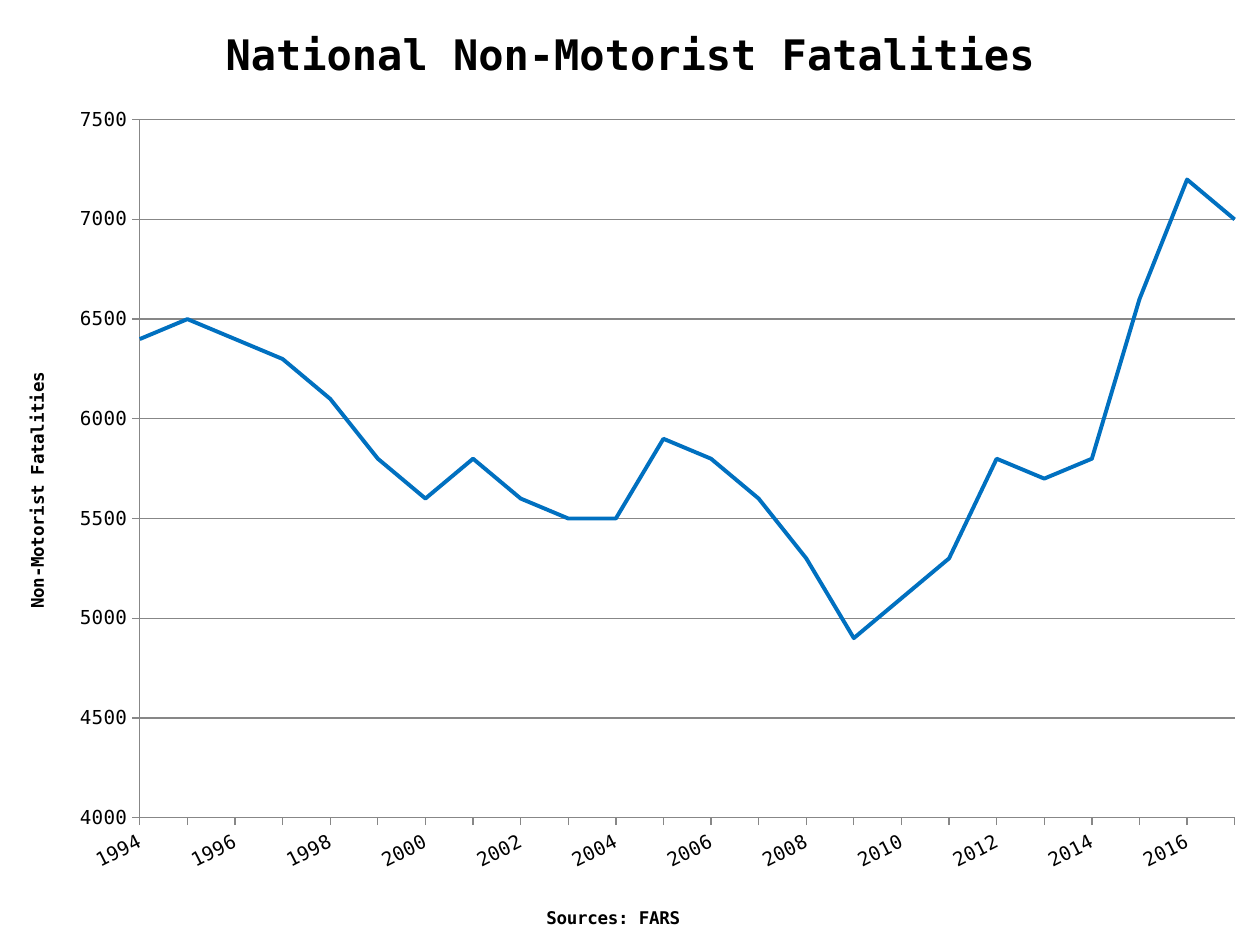
import dataclasses

import lxml.etree
import pptx
import pptx.chart.data
import pptx.dml.color
import pptx.enum.chart
import pptx.oxml.ns
import pptx.util

qn = pptx.oxml.ns.qn
Pt, Inches = pptx.util.Pt, pptx.util.Inches
WIDTH, HEIGHT = 10, 7.5
FIRST_YEAR = 1994
FATALITIES = [6400, 6500, 6400, 6300, 6100, 5800, 5600, 5800, 5600, 5500, 5500, 5900,
              5800, 5600, 5300, 4900, 5100, 5300, 5800, 5700, 5800, 6600, 7200, 7000]


@dataclasses.dataclass
class Theme:
    font: str = "DejaVu Sans Mono"
    text: str = "000000"
    line: str = "0070C0"
    axis: str = "878787"
    title_size: int = 24
    tick_size: int = 11
    label_size: int = 10


def style_font(font, theme, size, bold=False):
    font.name, font.size, font.bold = theme.font, Pt(size), bold
    font.color.rgb = pptx.dml.color.RGBColor.from_string(theme.text)


def write(tf, text, theme, size, bold=True):
    """Put formatted text in the first paragraph of a text frame."""
    r = tf.paragraphs[0].add_run()
    r.text = text
    style_font(r.font, theme, size, bold)


def place(element, index, **position):
    """Lay out a chart element by hand; x, y, w and h are in inches."""
    for old in element.findall(qn("c:layout")):
        element.remove(old)
    layout = lxml.etree.Element(qn("c:layout"))
    manual = lxml.etree.SubElement(layout, qn("c:manualLayout"))
    if "w" in position:
        lxml.etree.SubElement(manual, qn("c:layoutTarget")).set("val", "inner")
    for key in ("x", "y"):
        lxml.etree.SubElement(manual, qn(f"c:{key}Mode")).set("val", "edge")
    for key, inches in position.items():
        share = inches / (WIDTH if key in "xw" else HEIGHT)
        lxml.etree.SubElement(manual, qn(f"c:{key}")).set("val", f"{share:.4f}")
    element.insert(index, layout)


def rotate(element, degrees):
    body = element.find(f".//{qn('a:bodyPr')}")
    body.set("rot", str(degrees * 60000))
    body.set("vert", "horz")


class SlideBuilder:
    def __init__(self, prs, theme):
        self.theme = theme
        self.s = prs.slides.add_slide(prs.slide_layouts[6])

    def stroke(self, line, color, width):
        line.color.rgb = pptx.dml.color.RGBColor.from_string(color)
        line.width = Pt(width)

    def scatter(self, name, points, left, top, width, height):
        data = pptx.chart.data.XyChartData()
        series = data.add_series(name)
        for x, y in points:
            series.add_data_point(x, y)
        chart = self.s.shapes.add_chart(
            pptx.enum.chart.XL_CHART_TYPE.XY_SCATTER_LINES_NO_MARKERS,
            left, top, width, height, data).chart
        chart.has_legend = False
        style_font(chart.font, self.theme, self.theme.label_size)
        plot = chart.plots[0]
        plot.vary_by_categories = False
        plot.series[0].smooth = False
        self.stroke(plot.series[0].format.line, self.theme.line, 2.25)
        return chart

    def axis(self, axis, title, low, high, step, grid):
        axis.minimum_scale, axis.maximum_scale, axis.major_unit = low, high, step
        axis.has_major_gridlines = grid
        axis.major_tick_mark = pptx.enum.chart.XL_TICK_MARK.OUTSIDE
        axis.crosses = pptx.enum.chart.XL_AXIS_CROSSES.MINIMUM
        axis.tick_labels.number_format = "General"
        axis.tick_labels.number_format_is_linked = False
        style_font(axis.tick_labels.font, self.theme, self.theme.tick_size)
        self.stroke(axis.format.line, self.theme.axis, 0.75)
        if grid:
            self.stroke(axis.major_gridlines.format.line, self.theme.axis, 0.75)
        write(axis.axis_title.text_frame, title, self.theme, self.theme.label_size)


def main():
    prs = pptx.Presentation()
    prs.slide_width, prs.slide_height = Inches(WIDTH), Inches(HEIGHT)
    theme = Theme()
    builder = SlideBuilder(prs, theme)

    # Chart filling the slide
    points = list(enumerate(FATALITIES, FIRST_YEAR))
    chart = builder.scatter("Series 1", points, Inches(0), Inches(0),
                            Inches(WIDTH), Inches(HEIGHT))
    chart.has_title = True
    write(chart.chart_title.text_frame, "National Non-Motorist Fatalities",
          theme, theme.title_size)

    # Axes
    builder.axis(chart.category_axis, "Sources: FARS", FIRST_YEAR, points[-1][0], 1, False)
    builder.axis(chart.value_axis, "Non-Motorist Fatalities", 4000, 7500, 500, True)

    # Rotated text: at this slant every second year label has room
    root = chart.element
    year_axis, count_axis = root.findall(f".//{qn('c:valAx')}")
    rotate(year_axis.find(qn("c:txPr")), -27)
    rotate(count_axis.find(qn("c:title")), -90)

    # Positions
    place(root.find(f".//{qn('c:plotArea')}"), 0, x=1.11, y=0.95, w=8.69, h=5.54)
    place(root.find(f"{qn('c:chart')}/{qn('c:title')}"), 1, x=1.73, y=0.15)
    place(year_axis.find(qn("c:title")), 1, x=4.31, y=7.17)
    place(count_axis.find(qn("c:title")), 1, x=0.18, y=2.93)

    prs.save("out.pptx")


if __name__ == "__main__":
    main()
